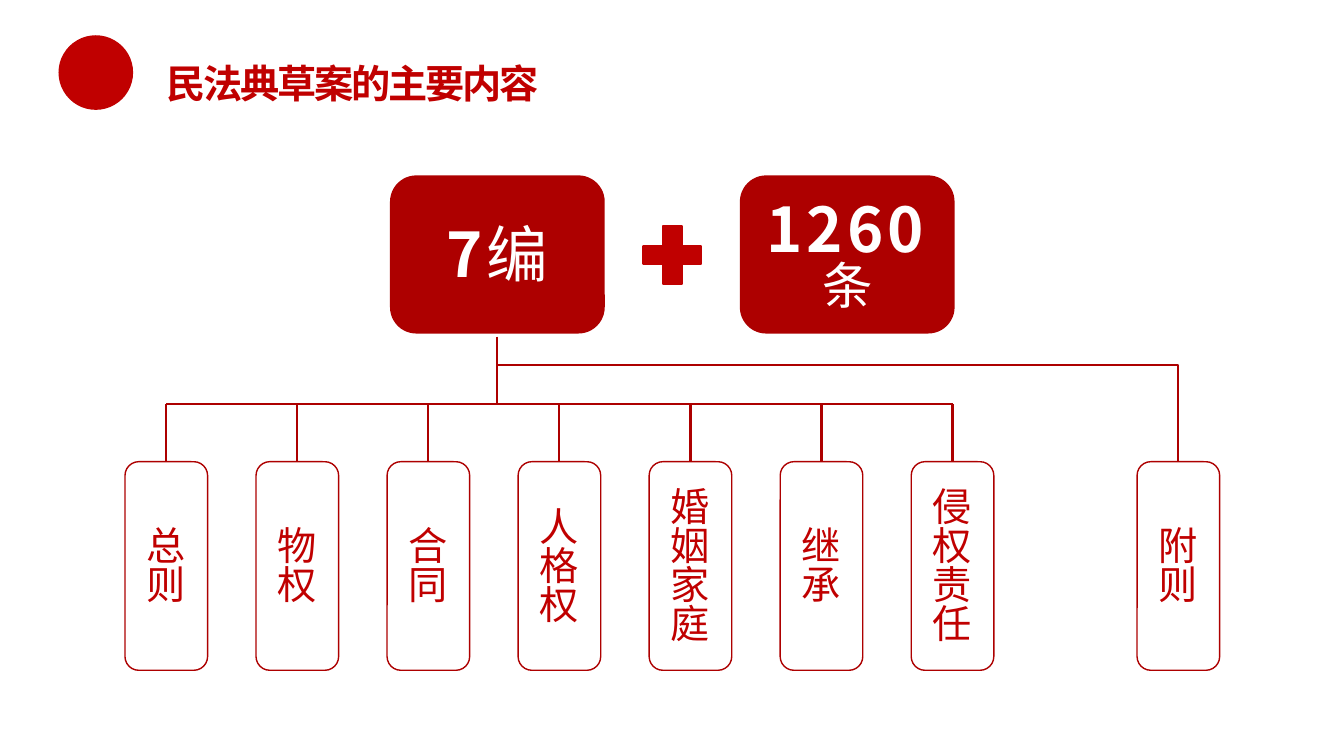
from dataclasses import dataclass

from lxml.etree import SubElement
from pptx import Presentation
from pptx.dml.color import RGBColor
from pptx.enum.shapes import MSO_CONNECTOR as Connector, MSO_SHAPE as Shape
from pptx.enum.text import MSO_ANCHOR as Anchor, PP_ALIGN as Align
from pptx.oxml.ns import qn
from pptx.util import Pt


@dataclass(frozen=True)
class Theme:
    font: str = "Noto Sans CJK SC"
    red: RGBColor = RGBColor(0xC0, 0x00, 0x00)
    dark: RGBColor = RGBColor(0xAD, 0x00, 0x00)
    white: RGBColor = RGBColor(0xFF, 0xFF, 0xFF)
    body_size: int = 28
    number_size: int = 44
    unit_size: int = 36
    gap_size: int = 32
    line_spacing: float = 0.83


THEME = Theme()

# Chart geometry in points
BOX_TOP, BOX_WIDTH, BOX_HEIGHT = 329.8, 59, 149
FIRST_LEFT, PITCH, APPENDIX_LEFT = 89.3, 93.6, 812.2
TOTAL_TOP, TOTAL_WIDTH, TOTAL_HEIGHT = 125.3, 153.4, 113
TRUNK_X, TRUNK_TOP, BRANCH_Y, BUS_Y = 355, 240.5, 260.6, 288.7

PARTS = ["总则", "物权", "合同", "人格权", "婚姻家庭", "继承", "侵权责任"]


def style_span(span, size, color, bold=False, spacing=0):
    font = span.font
    font.name, font.size, font.bold = THEME.font, Pt(size), bold
    font.color.rgb = color
    properties = span._r.get_or_add_rPr()
    SubElement(properties, qn("a:ea"), typeface=THEME.font)
    if spacing:
        properties.set("spc", str(round(spacing * 100)))


def set_frame(frame, top_inset):
    frame.word_wrap = True
    frame.vertical_anchor = Anchor.MIDDLE
    frame.margin_left = frame.margin_right = Pt(7.2)
    frame.margin_top, frame.margin_bottom = Pt(top_inset), Pt(3.6)


def add_block(page, kind, left, top, width, height, fill=None, line=None, weight=1):
    block = page.shapes.add_shape(kind, Pt(left), Pt(top), Pt(width), Pt(height))
    block.shadow.inherit = False
    if fill is None:
        block.fill.background()
    else:
        block.fill.solid()
        block.fill.fore_color.rgb = fill
    if line is None:
        block.line.fill.background()
    else:
        block.line.color.rgb, block.line.width = line, Pt(weight)
    return block


def add_title(page, text):
    title = page.shapes.title
    title.left, title.top, title.width, title.height = Pt(111.6), Pt(39.6), Pt(671.8), Pt(41)
    title.text_frame.text = text
    set_frame(title.text_frame, 7.2)
    para = title.text_frame.paragraphs[0]
    para.alignment, para.line_spacing = Align.LEFT, THEME.line_spacing
    style_span(para.runs[0], THEME.body_size, THEME.red, True, -1.5)


def add_total(page, left, pieces):
    """Solid box; each piece is text, size, bold."""
    box = add_block(page, Shape.ROUNDED_RECTANGLE, left, TOTAL_TOP,
                    TOTAL_WIDTH, TOTAL_HEIGHT, fill=THEME.dark)
    set_frame(box.text_frame, 9.6)
    para = box.text_frame.paragraphs[0]
    para.alignment, para.line_spacing = Align.CENTER, THEME.line_spacing
    for text, size, bold in pieces:
        span = para.add_run()
        span.text = text
        style_span(span, size, THEME.white, bold, 3)


def add_part(page, left, name):
    box = add_block(page, Shape.ROUNDED_RECTANGLE, left, BOX_TOP,
                    BOX_WIDTH, BOX_HEIGHT, line=THEME.dark)
    box.text_frame.text = name
    set_frame(box.text_frame, 7.2)
    para = box.text_frame.paragraphs[0]
    para.alignment, para.line_spacing = Align.CENTER, THEME.line_spacing
    style_span(para.runs[0], THEME.body_size, THEME.red)


def add_line(page, x1, y1, x2, y2):
    line = page.shapes.add_connector(Connector.STRAIGHT, Pt(x1), Pt(y1), Pt(x2), Pt(y2))
    line.line.color.rgb, line.line.width = THEME.dark, Pt(1.5)
    SubElement(line._element.spPr, qn("a:effectLst"))


def add_branch(page, points):
    start, *rest = [(Pt(x), Pt(y)) for x, y in points]
    builder = page.shapes.build_freeform(*start)
    builder.add_line_segments(rest, close=False)
    branch = builder.convert_to_shape()
    branch.shadow.inherit = False
    branch.fill.background()
    branch.line.color.rgb, branch.line.width = THEME.dark, Pt(1.5)


def main():
    deck = Presentation()
    deck.slide_width, deck.slide_height = Pt(960), Pt(540)
    page = deck.slides.add_slide(deck.slide_layouts[5])

    # Heading
    add_block(page, Shape.OVAL, 41.8, 25.2, 53.3, 53.3, fill=THEME.red)
    add_title(page, "民法典草案的主要内容")

    # Totals
    add_total(page, 278.6, [("7", THEME.number_size, True),
                            ("编", THEME.number_size, False)])
    add_total(page, 528.5, [("1260", THEME.number_size, True),
                            (" ", THEME.gap_size, False),
                            ("条", THEME.unit_size, False)])
    add_block(page, Shape.MATH_PLUS, 452.2, 154.1, 56.2, 56.2,
              fill=THEME.red, line=THEME.red, weight=1.5)

    # Parts and their stems
    lefts = [FIRST_LEFT + PITCH * index for index in range(len(PARTS))]
    centers = [left + BOX_WIDTH / 2 for left in lefts]
    for left, center, name in zip(lefts, centers, PARTS):
        add_part(page, left, name)
        add_line(page, center, BUS_Y, center, BOX_TOP)
    add_part(page, APPENDIX_LEFT, "附则")

    # Bus, trunk and branch to the appendix
    add_line(page, centers[0], BUS_Y, centers[-1], BUS_Y)
    add_line(page, TRUNK_X, TRUNK_TOP, TRUNK_X, BUS_Y)
    appendix_x = APPENDIX_LEFT + BOX_WIDTH / 2
    add_branch(page, [(TRUNK_X, BRANCH_Y), (appendix_x, BRANCH_Y), (appendix_x, BOX_TOP)])

    deck.save("out.pptx")


if __name__ == "__main__":
    main()
